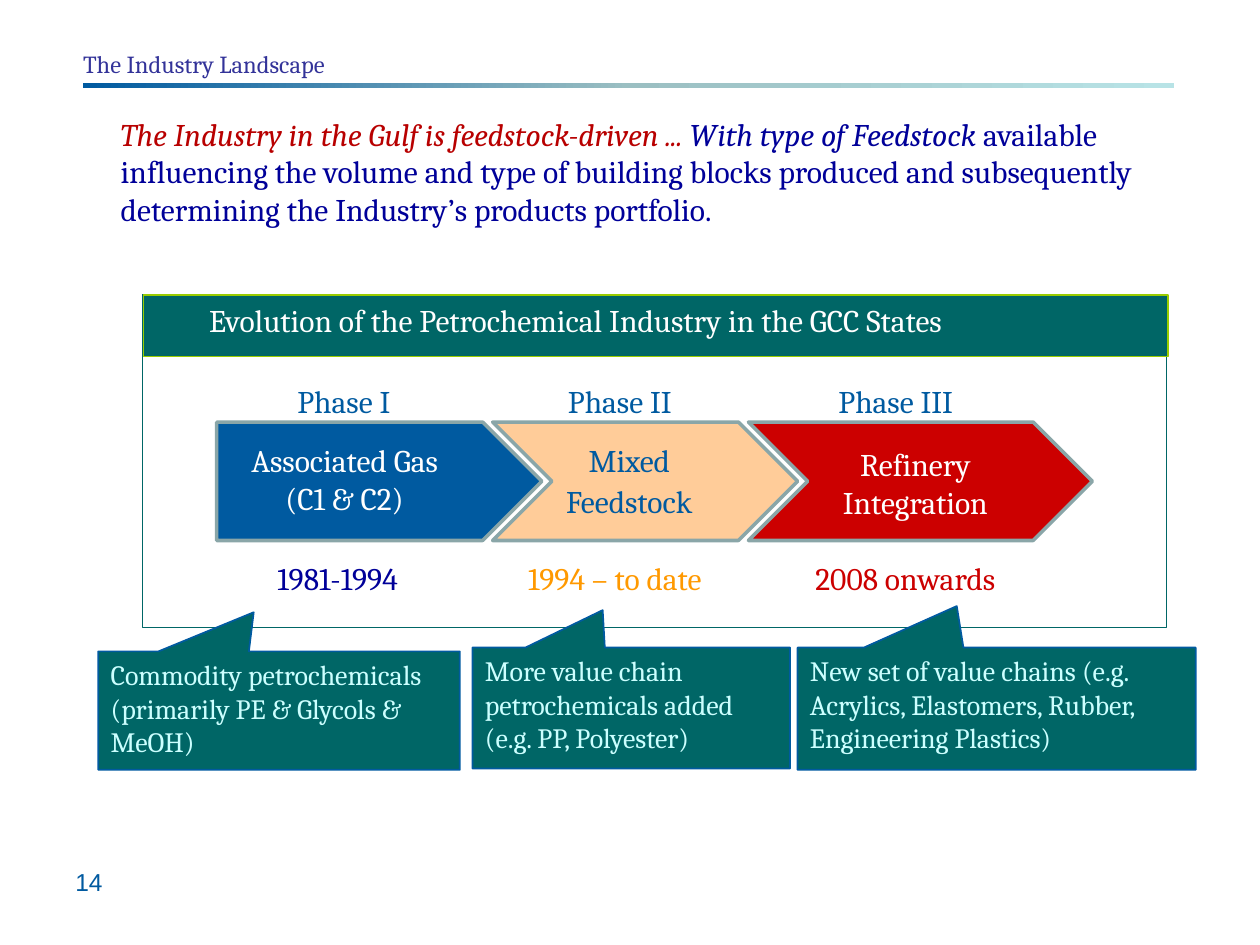
from copy import deepcopy

from pptx import Presentation
from pptx.dml.color import RGBColor
from pptx.enum.shapes import MSO_SHAPE
from pptx.enum.text import MSO_ANCHOR, PP_ALIGN
from pptx.oxml.ns import qn
from pptx.util import Inches, Pt

THEME = {
    "blue": "005AA0", "navy": "000099", "indigo": "333399", "teal": "006666",
    "lime": "99CC00", "ice": "CCFFFF", "white": "FFFFFF", "steel": "8AA6A8",
    "peach": "FFCC99", "orange": "FF9900", "red": "CC0000", "crimson": "B80000",
    "rule": ("005AA0", "9BBFC2", "B8E3E6"),
    "serif": "Cambria", "sans": "Arial",
    "small": 14, "note": 16, "body": 18,
}

# Content
HEADING = "The Industry Landscape"
MESSAGE = [  # text, colour, italic
    ("The Industry in the Gulf is feedstock-driven ... ", "crimson", True),
    ("With type of Feedstock", "navy", True),
    (" available influencing the volume and type of building blocks produced and "
     "subsequently determining the Industry’s products portfolio.", "navy", False),
]
PANEL_TITLE = "Evolution of the Petrochemical Industry in the GCC States"
PAGE_NUMBER = "14"
# Spans are (left, width); label boxes are (left, top, width, height)
PHASES = [
    {"name": "Phase I", "arrow": MSO_SHAPE.PENTAGON, "span": (1.72, 2.58), "fill": "blue",
     "label": ["Associated Gas (C1 & C2)"], "label_box": (1.88, 3.5, 1.71, 0.61),
     "label_color": "white",
     "years": "1981-1994", "years_span": (1.98, 1.4), "years_color": "navy",
     "note": "Commodity petrochemicals (primarily PE & Glycols & MeOH)",
     "note_box": (0.78, 5.17, 2.87, 0.94), "tip": (-0.07, -0.83)},
    {"name": "Phase II", "arrow": MSO_SHAPE.CHEVRON, "span": (3.91, 2.42), "fill": "peach",
     "label": ["Mixed", "Feedstock"], "label_box": (3.98, 3.5, 2.03, 0.63),
     "label_color": "blue",
     "years": "1994 – to date", "years_span": (3.74, 2.28), "years_color": "orange",
     "note": "More value chain petrochemicals added (e.g. PP, Polyester)",
     "note_box": (3.75, 5.14, 2.52, 0.96), "tip": (-0.09, -0.81)},
    {"name": "Phase III", "arrow": MSO_SHAPE.CHEVRON, "span": (5.94, 2.73), "fill": "red",
     "label": ["Refinery Integration"], "label_box": (6.25, 3.53, 2.03, 0.6),
     "label_color": "white",
     "years": "2008 onwards", "years_span": (6.24, 1.89), "years_color": "red",
     "note": "New set of value chains (e.g. Acrylics, Elastomers, Rubber, Engineering Plastics)",
     "note_box": (6.33, 5.14, 3.16, 0.97), "tip": (-0.1, -0.84)},
]

# Layout
NAME_LEFT, NAME_STEP, NAME_WIDTH = 2.03, 2.19, 1.4
NAME_TOP, ARROW_TOP, YEARS_TOP = 3.03, 3.35, 4.44
ARROW_HEIGHT, LINE_HEIGHT = 0.94, 0.3
MARGIN, CONTENT_WIDTH = 0.66, 8.66


def rgb(name):
    return RGBColor.from_string(THEME[name])


def style(font, color, size="body", face="serif"):
    font.name, font.size = THEME[face], Pt(THEME[size])
    font.color.rgb = rgb(color)


def prepare(frame, inset):
    frame.word_wrap = True
    frame.vertical_anchor = MSO_ANCHOR.TOP
    if not inset:
        frame.margin_left = frame.margin_right = 0
        frame.margin_top = frame.margin_bottom = 0


def write(frame, lines, color, size="body", face="serif", align=PP_ALIGN.LEFT, inset=False):
    prepare(frame, inset)
    for index, line in enumerate(lines):
        para = frame.add_paragraph() if index else frame.paragraphs[0]
        para.text, para.alignment = line, align
        if index:
            para.space_before = Pt(2)
        style(para.font, color, size, face)


def add_text(page, box, lines, color, **options):
    area = page.shapes.add_textbox(*map(Inches, box))
    write(area.text_frame, lines, color, **options)


def add_block(page, kind, box, fill=None, line=None, weight=0.75):
    block = page.shapes.add_shape(kind, *map(Inches, box))
    block.shadow.inherit = False
    if fill:
        block.fill.solid()
        block.fill.fore_color.rgb = rgb(fill)
    else:
        block.fill.background()
    if line:
        block.line.color.rgb = rgb(line)
        block.line.width = Pt(weight)
    else:
        block.line.fill.background()
    return block


def add_header(page):
    add_text(page, (MARGIN, 0.39, CONTENT_WIDTH, 0.24), [HEADING], "indigo", size="small")
    rule = add_block(page, MSO_SHAPE.RECTANGLE, (MARGIN, 0.66, CONTENT_WIDTH, 0.04))
    rule.fill.gradient()
    rule.fill.gradient_angle = 0
    # A default gradient has two stops; the rule needs a middle one
    first = rule._element.spPr.find(".//" + qn("a:gs"))
    first.addnext(deepcopy(first))
    for index, (stop, color) in enumerate(zip(rule.fill.gradient_stops, THEME["rule"])):
        stop.position = index / 2
        stop.color.rgb = RGBColor.from_string(color)


def add_message(page):
    frame = page.shapes.add_textbox(*map(Inches, (0.86, 0.86, 8.48, 1.01))).text_frame
    prepare(frame, inset=True)
    for text, color, italic in MESSAGE:
        span = frame.paragraphs[0].add_run()
        span.text = text
        style(span.font, color)
        span.font.italic = italic


def add_panel(page):
    add_block(page, MSO_SHAPE.RECTANGLE, (1.13, 2.34, 8.13, 2.64), line="teal")
    add_block(page, MSO_SHAPE.RECTANGLE, (1.14, 2.34, 8.13, 0.49), "teal", "lime")
    add_text(page, (1.66, 2.39, 7.54, LINE_HEIGHT), [PANEL_TITLE], "white")


def add_phase(page, index, phase):
    center = PP_ALIGN.CENTER
    # Phase name and years, above and below the arrow
    name_box = (NAME_LEFT + index * NAME_STEP, NAME_TOP, NAME_WIDTH, LINE_HEIGHT)
    add_text(page, name_box, [phase["name"]], "blue", align=center)
    left, width = phase["years_span"]
    add_text(page, (left, YEARS_TOP, width, LINE_HEIGHT), [phase["years"]],
             phase["years_color"], align=center)
    # Callout
    note = add_block(page, MSO_SHAPE.RECTANGULAR_CALLOUT, phase["note_box"], "teal", "blue", 1)
    note.adjustments[0], note.adjustments[1] = phase["tip"]
    write(note.text_frame, [phase["note"]], "ice", size="note", inset=True)
    # Arrow and its label
    left, width = phase["span"]
    add_block(page, phase["arrow"], (left, ARROW_TOP, width, ARROW_HEIGHT),
              phase["fill"], "steel", 2)
    add_text(page, phase["label_box"], phase["label"], phase["label_color"], align=center)


def main():
    deck = Presentation()
    deck.slide_width, deck.slide_height = Inches(10), Inches(7.5)
    page = deck.slides.add_slide(deck.slide_layouts[6])
    add_header(page)
    add_message(page)
    add_panel(page)
    for index, phase in enumerate(PHASES):
        add_phase(page, index, phase)
    add_text(page, (0.5, 6.83, 2.33, 0.52), [PAGE_NUMBER], "blue",
             size="small", face="sans", inset=True)
    deck.save("out.pptx")


if __name__ == "__main__":
    main()
